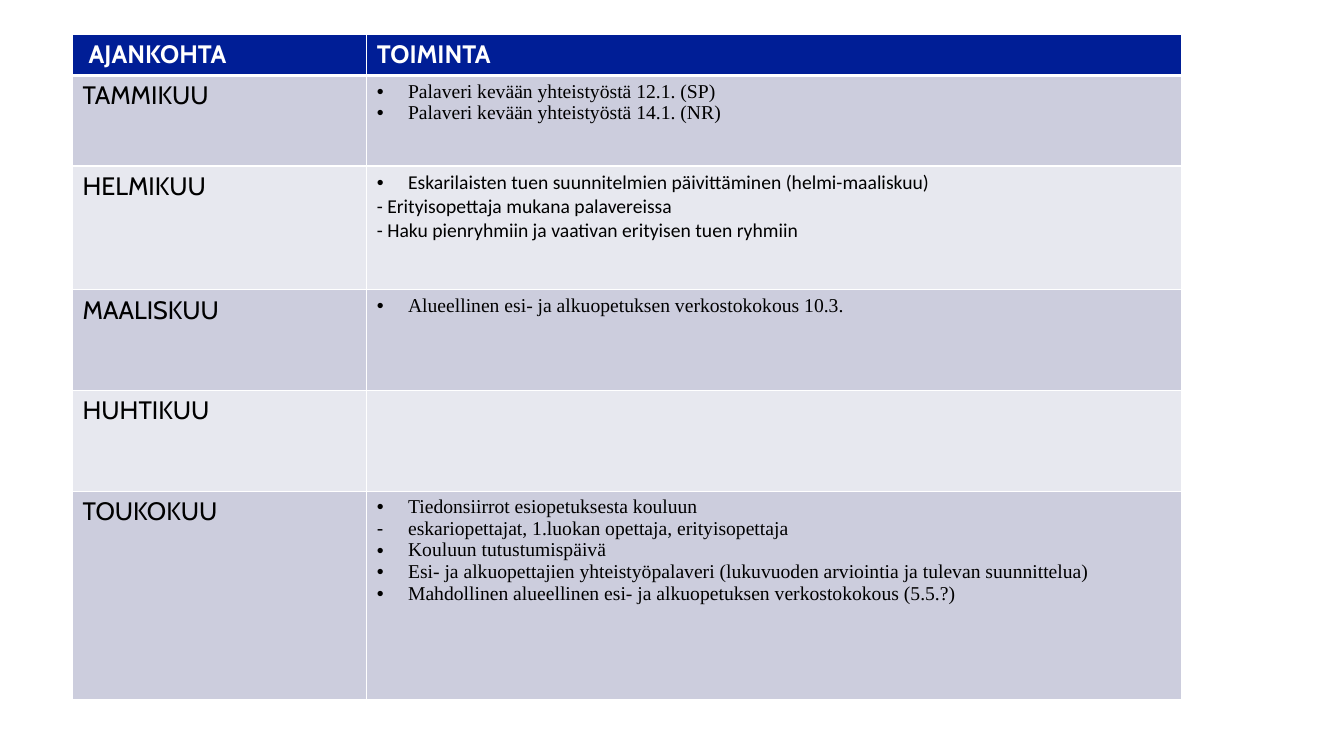
from dataclasses import dataclass

from lxml.etree import SubElement
from pptx import Presentation
from pptx.dml.color import RGBColor
from pptx.oxml.ns import qn
from pptx.util import Inches, Pt


@dataclass(frozen=True)
class Theme:
    """Colours, fonts and type sizes of the slide."""
    header: str = "001E96"
    bands: tuple = ("CCCDDD", "E7E8EF")
    white: str = "FFFFFF"
    black: str = "000000"
    month_font: str = "Cabin"
    serif: str = "Times New Roman"
    sans: str = "Calibri"
    month_size: int = 18
    task_size: int = 14


THEME = Theme()
COLUMN_SHARES = (2.92, 8.09)
ROW_SHARES = (0.41, 0.9, 1.23, 1, 1, 2.07)
HEADINGS = ("AJANKOHTA", "TOIMINTA")
SCHEDULE = [
    ("TAMMIKUU", THEME.serif, [
        ("•", "Palaveri kevään yhteistyöstä 12.1. (SP)"),
        ("•", "Palaveri kevään yhteistyöstä 14.1. (NR)"),
    ]),
    ("HELMIKUU", THEME.sans, [
        ("•", "Eskarilaisten tuen suunnitelmien päivittäminen (helmi-maaliskuu)"),
        (None, "- Erityisopettaja mukana palavereissa"),
        (None, "- Haku pienryhmiin ja vaativan erityisen tuen ryhmiin"),
    ]),
    ("MAALISKUU", THEME.serif, [
        ("•", "Alueellinen esi- ja alkuopetuksen verkostokokous 10.3."),
    ]),
    ("HUHTIKUU", THEME.serif, []),
    ("TOUKOKUU", THEME.serif, [
        ("•", "Tiedonsiirrot esiopetuksesta kouluun"),
        ("-", "eskariopettajat, 1.luokan opettaja, erityisopettaja"),
        ("•", "Kouluun tutustumispäivä"),
        ("•", "Esi- ja alkuopettajien yhteistyöpalaveri (lukuvuoden arviointia ja tulevan suunnittelua)"),
        ("•", "Mahdollinen alueellinen esi- ja alkuopetuksen verkostokokous (5.5.?)"),
    ]),
]


def style_cell(cell, color, top=1, bottom=1):
    """Give a cell its white borders and its fill."""
    properties = cell._tc.get_or_add_tcPr()
    for side, width in (("L", 1), ("R", 1), ("T", top), ("B", bottom)):
        border = SubElement(properties, qn(f"a:ln{side}"), w=str(Pt(width)))
        paint = SubElement(border, qn("a:solidFill"))
        SubElement(paint, qn("a:srgbClr"), val=THEME.white)
    cell.fill.solid()
    cell.fill.fore_color.rgb = RGBColor.from_string(color)


def write(paragraph, text, font, size, color, bold=False):
    """Set the text of a paragraph and format its runs."""
    paragraph.text = text
    for run in paragraph.runs:
        run.font.name = font
        run.font.size = Pt(size)
        run.font.bold = bold
        run.font.color.rgb = RGBColor.from_string(color)


def add_bullet(paragraph, mark):
    """Hang a paragraph behind a bullet mark."""
    properties = paragraph._p.get_or_add_pPr()
    properties.set("marL", str(Inches(0.31)))
    properties.set("indent", str(-Inches(0.31)))
    SubElement(properties, qn("a:buFont"), typeface="Arial")
    SubElement(properties, qn("a:buChar"), char=mark)


def fill_tasks(cell, tasks, font):
    """Write the tasks of one month as a list."""
    frame = cell.text_frame
    for index, (mark, task) in enumerate(tasks):
        paragraph = frame.add_paragraph() if index else frame.paragraphs[0]
        if mark:
            add_bullet(paragraph, mark)
        write(paragraph, task, font, THEME.task_size, THEME.black)


def add_schedule(slide, left, top, width, height):
    """Place the spring schedule table in the given box."""
    table = slide.shapes.add_table(
        len(SCHEDULE) + 1, len(HEADINGS), left, top, width, height).table
    for column, share in zip(table.columns, COLUMN_SHARES):
        column.width = int(width * share / sum(COLUMN_SHARES))
    for row, share in zip(table.rows, ROW_SHARES):
        row.height = int(height * share / sum(ROW_SHARES))

    for cell, heading in zip(table.rows[0].cells, HEADINGS):
        style_cell(cell, THEME.header, bottom=3)
        write(cell.text_frame.paragraphs[0], heading, THEME.month_font,
              THEME.month_size, THEME.white, bold=True)
    table.cell(0, 0).margin_left = Inches(0.16)

    for number, (month, font, tasks) in enumerate(SCHEDULE, start=1):
        month_cell, task_cell = table.rows[number].cells
        for cell in (month_cell, task_cell):
            style_cell(cell, THEME.bands[(number - 1) % 2], top=3 if number == 1 else 1)
        write(month_cell.text_frame.paragraphs[0], month, THEME.month_font,
              THEME.month_size, THEME.black)
        fill_tasks(task_cell, tasks, font)


def main():
    """Build the slide and save it."""
    presentation = Presentation()
    presentation.slide_width = Inches(13.33)
    presentation.slide_height = Inches(7.5)
    slide = presentation.slides.add_slide(presentation.slide_layouts[6])
    add_schedule(slide, Inches(0.72), Inches(0.34), Inches(11), Inches(6.6))
    presentation.save("out.pptx")


if __name__ == "__main__":
    main()
